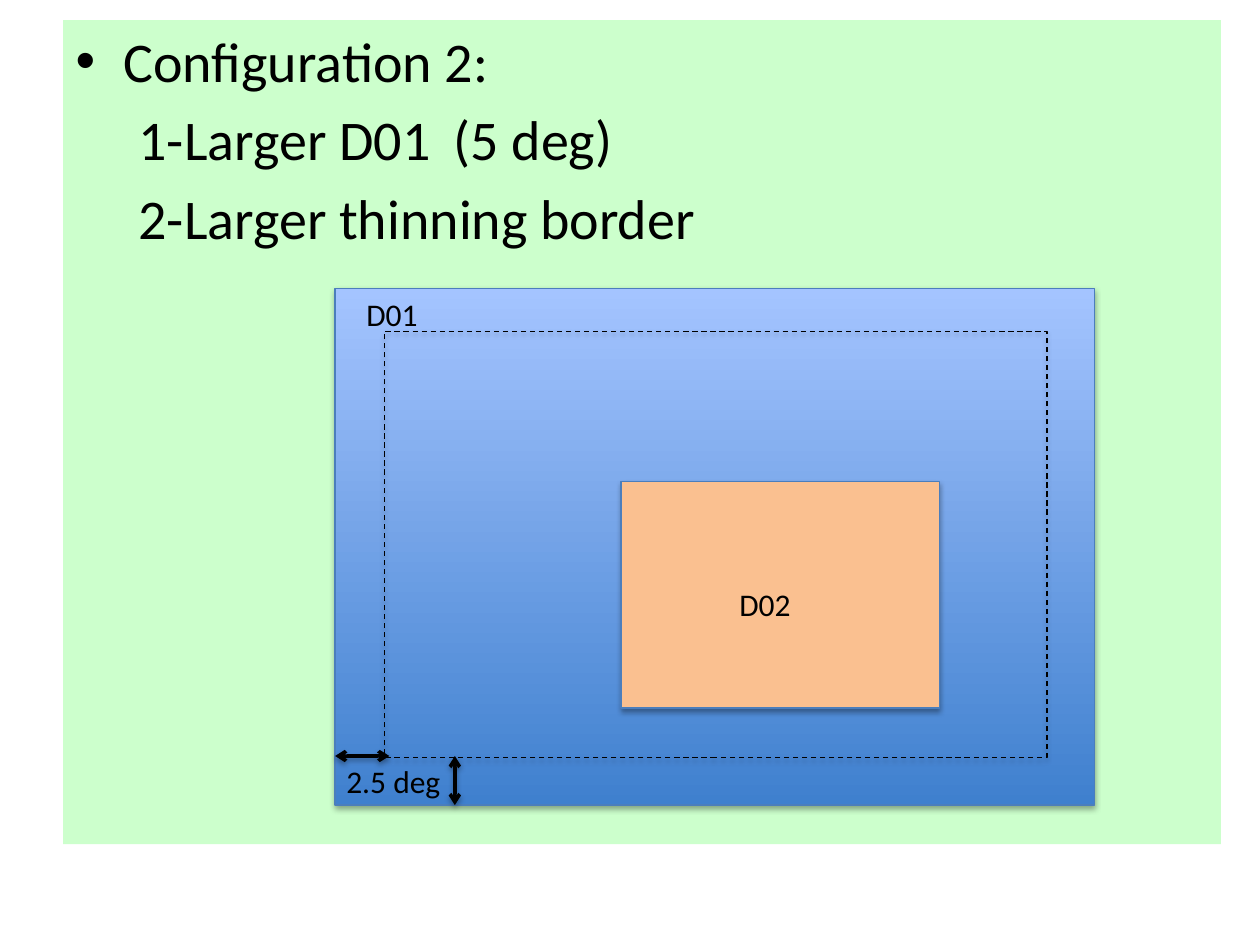
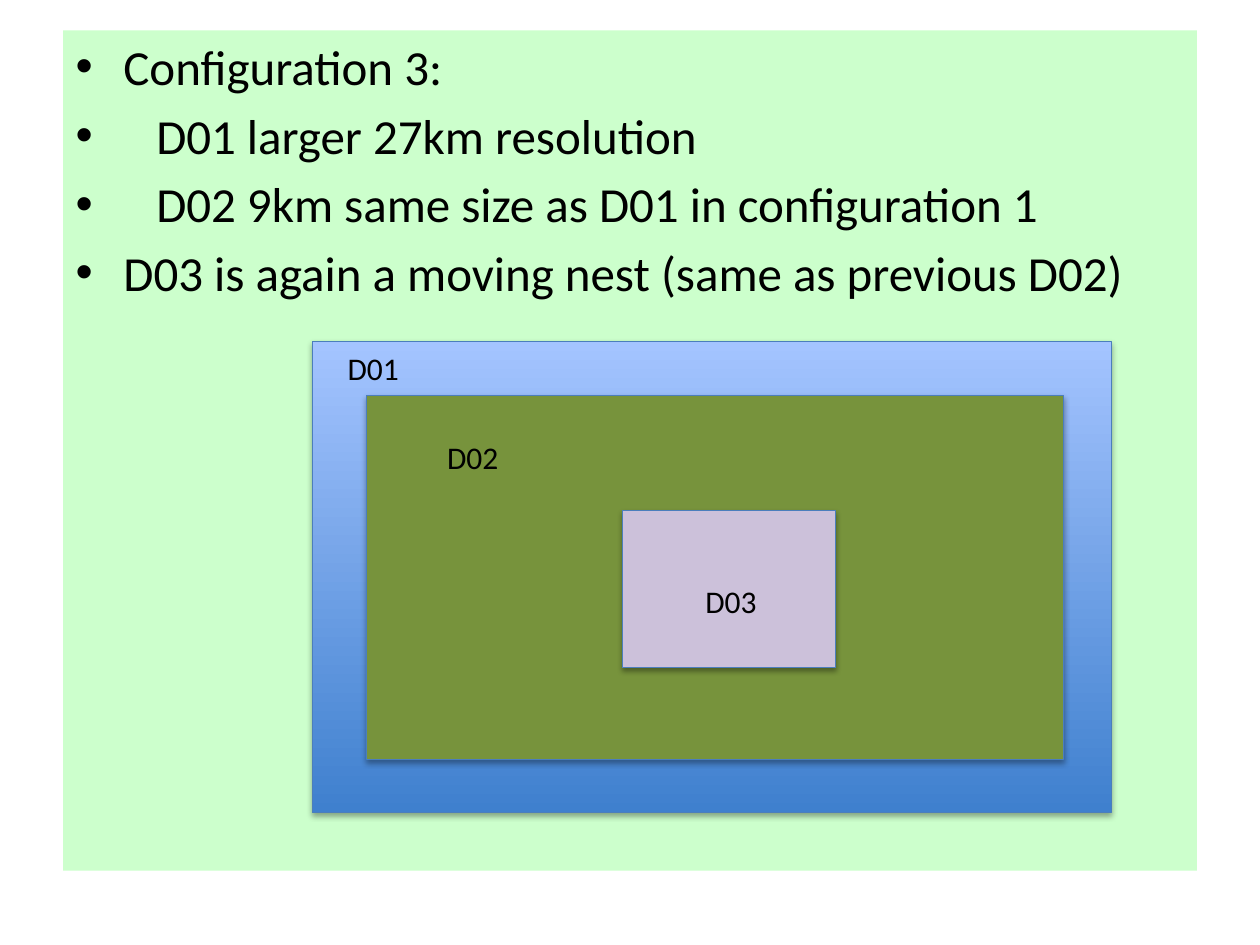
from lxml import etree
from pptx import Presentation, util as u
from pptx.dml.color import RGBColor
from pptx.enum import dml, shapes, text
from pptx.oxml import ns

BLACK = RGBColor(0x00, 0x00, 0x00)
MINT = RGBColor(0xCC, 0xFF, 0xCC)
EDGE = RGBColor(0x4B, 0x7E, 0xBC)
DEEP_BLUE = RGBColor(0x3F, 0x80, 0xCE)
PALE_BLUE = RGBColor(0xA4, 0xC4, 0xFF)
PEACH = RGBColor(0xFA, 0xC0, 0x90)
OLIVE = RGBColor(0x77, 0x93, 0x3C)
LILAC = RGBColor(0xCC, 0xC1, 0xDA)
FONT = "Calibri"
BLUES = (DEEP_BLUE, PALE_BLUE)

SLIDES = [
    {
        "body": (0.5, 0.16, 9.19, 6.54),
        "size": 32,
        "lines": [
            ("Configuration 2:", 0.38, -0.38),
            ("1-Larger D01\t(5 deg)", 0, 0.5),
            ("2-Larger thinning border", 0, 0.5),
        ],
        "boxes": [
            ((2.66, 2.29, 6.03, 4.1), BLUES),
            ((4.93, 3.82, 2.53, 1.8), PEACH),
            ((3.05, 2.63, 5.26, 3.38), None),
        ],
        "labels": [
            ("D02", (5.77, 4.59, 1.13, 0.4)),
            ("D01", (2.81, 2.29, 0.8, 0.4)),
            ("2.5 deg", (2.65, 6, 0.99, 0.4)),
        ],
        "arrows": [(2.66, 6, 3.09, 6), (3.61, 6, 3.61, 6.39)],
    },
    {
        "body": (0.5, 0.24, 9, 6.67),
        "size": 28,
        "lines": [
            ("Configuration 3:", 0.38, -0.38),
            ("D01 larger 27km resolution", 0.64, -0.64),
            ("D02 9km same size as D01 in configuration 1", 0.64, -0.64),
            ("D03 is again a moving nest (same as previous D02)", 0.38, -0.38),
        ],
        "boxes": [
            ((2.48, 2.71, 6.34, 3.74), BLUES),
            ((2.91, 3.14, 5.53, 2.89), OLIVE),
            ((4.94, 4.05, 1.69, 1.25), LILAC),
        ],
        "labels": [
            ("D01", (2.66, 2.72, 0.79, 0.4)),
            ("D02", (3.45, 3.43, 0.89, 0.4)),
            ("D03", (5.5, 4.57, 0.86, 0.4)),
        ],
        "arrows": [],
    },
]


def write(p, words, size=18, margin=0, indent=0):
    r = p.add_run()
    r.text = words
    r.font.name = FONT
    r.font.size = u.Pt(size)
    r.font.color.rgb = BLACK
    pPr = p._p.get_or_add_pPr()
    pPr.set("marL", str(u.Inches(margin)))
    pPr.set("indent", str(u.Inches(indent)))
    if indent >= 0:
        etree.SubElement(pPr, ns.qn("a:buNone"))


def add_shadow(sp):
    effects = etree.SubElement(sp._element.spPr, ns.qn("a:effectLst"))
    shadow = etree.SubElement(effects, ns.qn("a:outerShdw"), blurRad=str(u.Pt(3.1)),
                              dist=str(u.Pt(1.8)), dir="5400000", rotWithShape="0")
    color = etree.SubElement(shadow, ns.qn("a:srgbClr"), val=str(BLACK))
    etree.SubElement(color, ns.qn("a:alpha"), val="35000")


prs = Presentation()
prs.slide_width, prs.slide_height = u.Inches(10), u.Inches(7.5)

for config in SLIDES:
    s = prs.slides.add_slide(prs.slide_layouts[1])
    title = s.shapes.title._element
    title.getparent().remove(title)

    body = s.placeholders[1]
    body.left, body.top, body.width, body.height = map(u.Inches, config["body"])
    body.fill.solid()
    body.fill.fore_color.rgb = MINT
    tf = body.text_frame
    tf.auto_size = text.MSO_AUTO_SIZE.NONE
    for i, (words, margin, indent) in enumerate(config["lines"]):
        p = tf.add_paragraph() if i else tf.paragraphs[0]
        write(p, words, size=config["size"], margin=margin, indent=indent)

    for at, fill in config["boxes"]:
        sp = s.shapes.add_shape(shapes.MSO_SHAPE.RECTANGLE, *map(u.Inches, at))
        sp.line.width = u.Pt(0.75)
        sp.line.color.rgb = EDGE
        if fill is None:
            sp.fill.background()
            sp.line.color.rgb = BLACK
            sp.line.dash_style = dml.MSO_LINE.DASH
        elif fill is BLUES:
            sp.fill.gradient()
            sp.fill.gradient_angle = 90
            for position, (stop, color) in enumerate(zip(sp.fill.gradient_stops, BLUES)):
                stop.position = position
                stop.color.rgb = color
        else:
            sp.fill.solid()
            sp.fill.fore_color.rgb = fill
        add_shadow(sp)

    for words, at in config["labels"]:
        tf = s.shapes.add_textbox(*map(u.Inches, at)).text_frame
        tf.word_wrap = True
        write(tf.paragraphs[0], words)

    for ends in config["arrows"]:
        arrow = s.shapes.add_connector(shapes.MSO_CONNECTOR.STRAIGHT, *map(u.Inches, ends))
        arrow.line.width = u.Pt(2)
        arrow.line.color.rgb = BLACK
        for end in ("a:headEnd", "a:tailEnd"):
            etree.SubElement(arrow.line._get_or_add_ln(), ns.qn(end), type="arrow")
        add_shadow(arrow)

prs.save("out.pptx")
